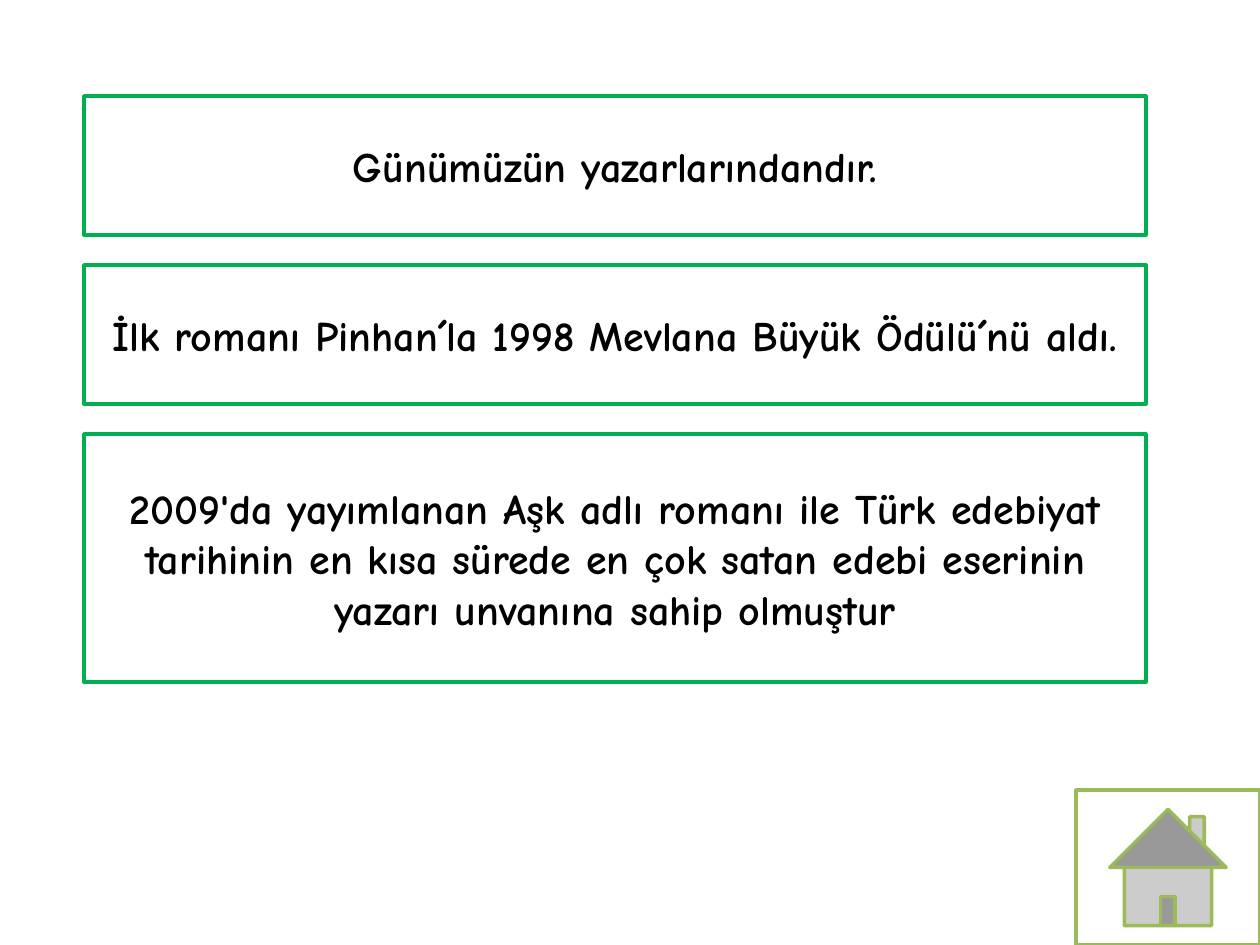
from pptx import Presentation
from pptx.dml.color import RGBColor
from pptx.enum.shapes import MSO_SHAPE as Shape
from pptx.enum.text import MSO_ANCHOR as Anchor, PP_ALIGN as Align
from pptx.util import Pt

PX = 914400 // 126
WHITE = RGBColor(0xFF, 0xFF, 0xFF)
BLACK = RGBColor(0x00, 0x00, 0x00)
GREEN = RGBColor(0x00, 0xB0, 0x50)
OLIVE = RGBColor(0x9B, 0xBB, 0x59)
FONT = "Comic Neue"

SLIDE_W, SLIDE_H = 1260, 945
FACTS = [  # text, box height
    ("Günümüzün yazarlarındandır.", 139),
    ("İlk romanı Pinhan´la 1998 Mevlana Büyük Ödülü´nü aldı.", 139),
    ("2009'da yayımlanan Aşk\u00a0adlı romanı ile Türk edebiyat tarihinin "
     "en kısa sürede en çok satan edebi eserinin yazarı unvanına sahip olmuştur", 248),
]
FACT_LEFT, FACT_TOP, FACT_W, FACT_GAP = 84, 96, 1062, 30
HOME_W, HOME_H = 184, 155


def add_outlined(slide, preset, left, top, width, height, color):
    shape = slide.shapes.add_shape(
        preset, *(length * PX for length in (left, top, width, height)))
    shape.shadow.inherit = False
    shape.fill.solid()
    shape.fill.fore_color.rgb = WHITE
    shape.line.color.rgb = color
    shape.line.width = Pt(2)
    return shape


def write_fact(box, text):
    frame = box.text_frame
    frame.word_wrap = True
    frame.vertical_anchor = Anchor.MIDDLE
    paragraph = frame.paragraphs[0]
    paragraph.alignment = Align.CENTER
    run = paragraph.add_run()
    run.text = text
    run.font.name = FONT
    run.font.size = Pt(24)
    run.font.bold = True
    run.font.color.rgb = BLACK


def main():
    prs = Presentation()
    prs.slide_width, prs.slide_height = SLIDE_W * PX, SLIDE_H * PX
    slide = prs.slides.add_slide(prs.slide_layouts[6])

    top = FACT_TOP
    for text, height in FACTS:
        box = add_outlined(slide, Shape.RECTANGLE, FACT_LEFT, top, FACT_W, height, GREEN)
        write_fact(box, text)
        top += height + FACT_GAP

    add_outlined(slide, Shape.ACTION_BUTTON_HOME, SLIDE_W - HOME_W, SLIDE_H - HOME_H,
                 HOME_W, HOME_H, OLIVE)
    prs.save("out.pptx")


if __name__ == "__main__":
    main()
